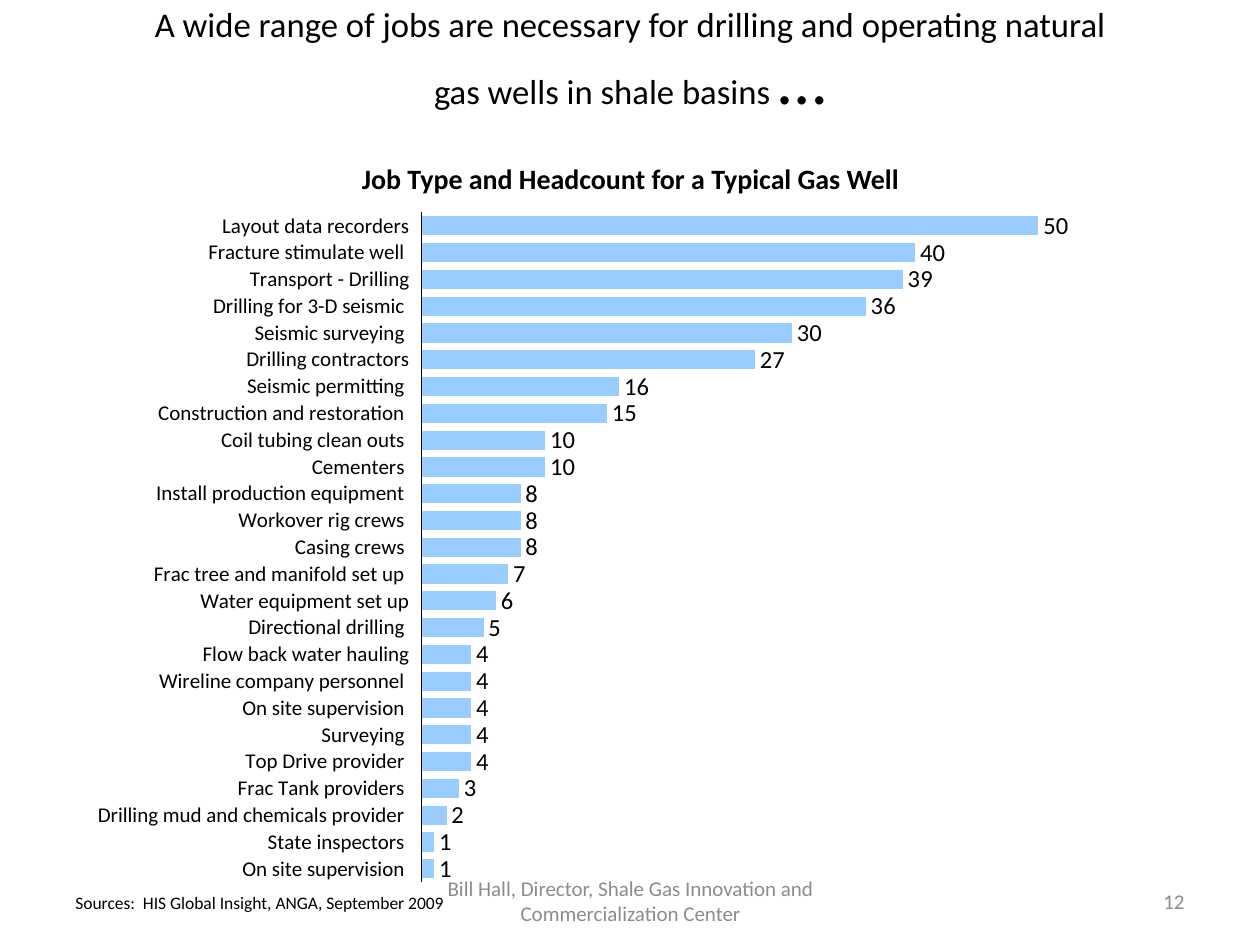
from dataclasses import dataclass

from lxml.etree import SubElement
from pptx import Presentation
from pptx.chart.data import CategoryChartData
from pptx.dml.color import RGBColor
from pptx.enum.chart import XL_CHART_TYPE, XL_LABEL_POSITION, XL_TICK_LABEL_POSITION, XL_TICK_MARK
from pptx.enum.text import MSO_ANCHOR, MSO_AUTO_SIZE, PP_ALIGN
from pptx.oxml.ns import qn
from pptx.util import Inches, Pt


@dataclass(frozen=True)
class Theme:
    font: str = "Calibri"
    black: RGBColor = RGBColor(0, 0, 0)
    gray: RGBColor = RGBColor(0x8C, 0x8C, 0x8C)
    bar: RGBColor = RGBColor(0x99, 0xCC, 0xFF)
    title: float = 19.8
    ellipsis: float = 39.6
    heading: float = 16
    chart: float = 18
    value: float = 14
    category: float = 12
    source: float = 10
    footer: float = 12


@dataclass(frozen=True)
class Label:
    text: str
    box: tuple[float, float, float, float]
    size: float
    color: RGBColor
    align: PP_ALIGN = PP_ALIGN.LEFT
    anchor: MSO_ANCHOR = MSO_ANCHOR.TOP
    bold: bool = False
    wrap: bool = True
    grow: bool = False


@dataclass(frozen=True)
class Job:
    name: str
    headcount: int


T = Theme()

JOBS = [
    Job("On site supervision ", 1),
    Job("State inspectors ", 1),
    Job("Drilling mud and chemicals provider ", 2),
    Job("Frac Tank providers ", 3),
    Job("Top Drive provider ", 4),
    Job("Surveying ", 4),
    Job("On site supervision ", 4),
    Job("Wireline company personnel ", 4),
    Job("Flow back water hauling", 4),
    Job("Directional drilling ", 5),
    Job("Water equipment set up", 6),
    Job("Frac tree and manifold set up ", 7),
    Job("Casing crews ", 8),
    Job("Workover rig crews ", 8),
    Job("Install production equipment ", 8),
    Job("Cementers ", 10),
    Job("Coil tubing clean outs ", 10),
    Job("Construction and restoration ", 15),
    Job("Seismic permitting ", 16),
    Job("Drilling contractors", 27),
    Job("Seismic surveying ", 30),
    Job("Drilling for 3-D seismic ", 36),
    Job("Transport - Drilling", 39),
    Job("Fracture stimulate well ", 40),
    Job("Layout data recorders", 50),
]

HEADING = Label("Job Type and Headcount for a Typical Gas Well", (2.39, 1.23, 5.23, 0.37),
                T.heading, T.black, PP_ALIGN.CENTER, bold=True, wrap=False, grow=True)
NOTES = [
    Label("Sources:  HIS Global Insight, ANGA, September 2009", (0.5, 7.03, 6.08, 0.27),
          T.source, T.black, grow=True),
    Label("Bill Hall, Director, Shale Gas Innovation and Commercialization Center",
          (3.42, 6.95, 3.17, 0.4), T.footer, T.gray, PP_ALIGN.CENTER, MSO_ANCHOR.MIDDLE),
    Label("12", (7.17, 6.95, 2.33, 0.4), T.footer, T.gray, PP_ALIGN.RIGHT, MSO_ANCHOR.MIDDLE),
]


def style_font(font, size: float, color: RGBColor = T.black, bold: bool = False) -> None:
    font.name = T.font
    font.size = Pt(size)
    font.color.rgb = color
    font.bold = bold


def add_run(p, text: str, size: float, color: RGBColor = T.black, bold: bool = False) -> None:
    r = p.add_run()
    r.text = text
    style_font(r.font, size, color, bold)


def add_title(s) -> None:
    sp = s.shapes.title
    sp.left, sp.top, sp.width, sp.height = (Inches(v) for v in (0.5, 0, 9, 1.01))
    tf = sp.text_frame
    tf.word_wrap = True
    tf.auto_size = MSO_AUTO_SIZE.NONE
    tf.vertical_anchor = MSO_ANCHOR.MIDDLE
    p = tf.paragraphs[0]
    p.alignment = PP_ALIGN.CENTER
    p.line_spacing = 0.9
    add_run(p, "A wide range of jobs are necessary for drilling and operating natural", T.title)
    p.add_line_break()
    add_run(p, "gas wells in shale basins ", T.title)
    add_run(p, "…", T.ellipsis)


def add_label(s, label: Label) -> None:
    tf = s.shapes.add_textbox(*(Inches(v) for v in label.box)).text_frame
    tf.word_wrap = label.wrap
    tf.auto_size = MSO_AUTO_SIZE.SHAPE_TO_FIT_TEXT if label.grow else MSO_AUTO_SIZE.NONE
    tf.vertical_anchor = label.anchor
    p = tf.paragraphs[0]
    p.alignment = label.align
    add_run(p, label.text, label.size, label.color, label.bold)


def set_plot_layout(chart, x: float, y: float, w: float, h: float) -> None:
    area = chart.element.chart.plotArea
    for old in area.findall(qn("c:layout")):
        area.remove(old)
    layout = SubElement(area, qn("c:layout"))
    area.insert(0, layout)
    manual = SubElement(layout, qn("c:manualLayout"))
    settings = {"layoutTarget": "inner", "xMode": "edge", "yMode": "edge",
                "x": x, "y": y, "w": w, "h": h}
    for tag, val in settings.items():
        SubElement(manual, qn(f"c:{tag}")).set("val", str(val))


def add_jobs_chart(s, jobs: list[Job]) -> None:
    data = CategoryChartData(number_format="#,##0")
    data.categories = [job.name for job in jobs]
    data.add_series("Series 1", [job.headcount for job in jobs])
    box = (Inches(v) for v in (0.63, 1.45, 8.74, 5.62))
    chart = s.shapes.add_chart(XL_CHART_TYPE.BAR_CLUSTERED, *box, data).chart
    chart.has_title = False
    chart.has_legend = False
    style_font(chart.font, T.chart)
    set_plot_layout(chart, 0.311, 0.042, 0.672, 0.946)

    cat = chart.category_axis
    cat.major_tick_mark = cat.minor_tick_mark = XL_TICK_MARK.NONE
    cat.tick_label_position = XL_TICK_LABEL_POSITION.LOW
    cat.has_major_gridlines = False
    cat.format.line.color.rgb = T.black
    cat.format.line.width = Pt(0.75)
    style_font(cat.tick_labels.font, T.category)

    val = chart.value_axis
    val.minimum_scale, val.maximum_scale = 0, 60
    val.has_major_gridlines = False
    val.visible = False

    plot = chart.plots[0]
    plot.gap_width = 40
    plot.vary_by_categories = False
    series = plot.series[0]
    series.format.fill.solid()
    series.format.fill.fore_color.rgb = T.bar
    labels = series.data_labels
    labels.show_value = True
    labels.number_format = "#,##0"
    labels.number_format_is_linked = False
    labels.position = XL_LABEL_POSITION.OUTSIDE_END
    style_font(labels.font, T.value)


def main() -> None:
    prs = Presentation()
    prs.slide_width, prs.slide_height = Inches(10), Inches(7.5)
    s = prs.slides.add_slide(prs.slide_layouts[5])
    add_title(s)
    add_label(s, HEADING)
    add_jobs_chart(s, JOBS)
    for note in NOTES:
        add_label(s, note)
    prs.save("out.pptx")


if __name__ == "__main__":
    main()
